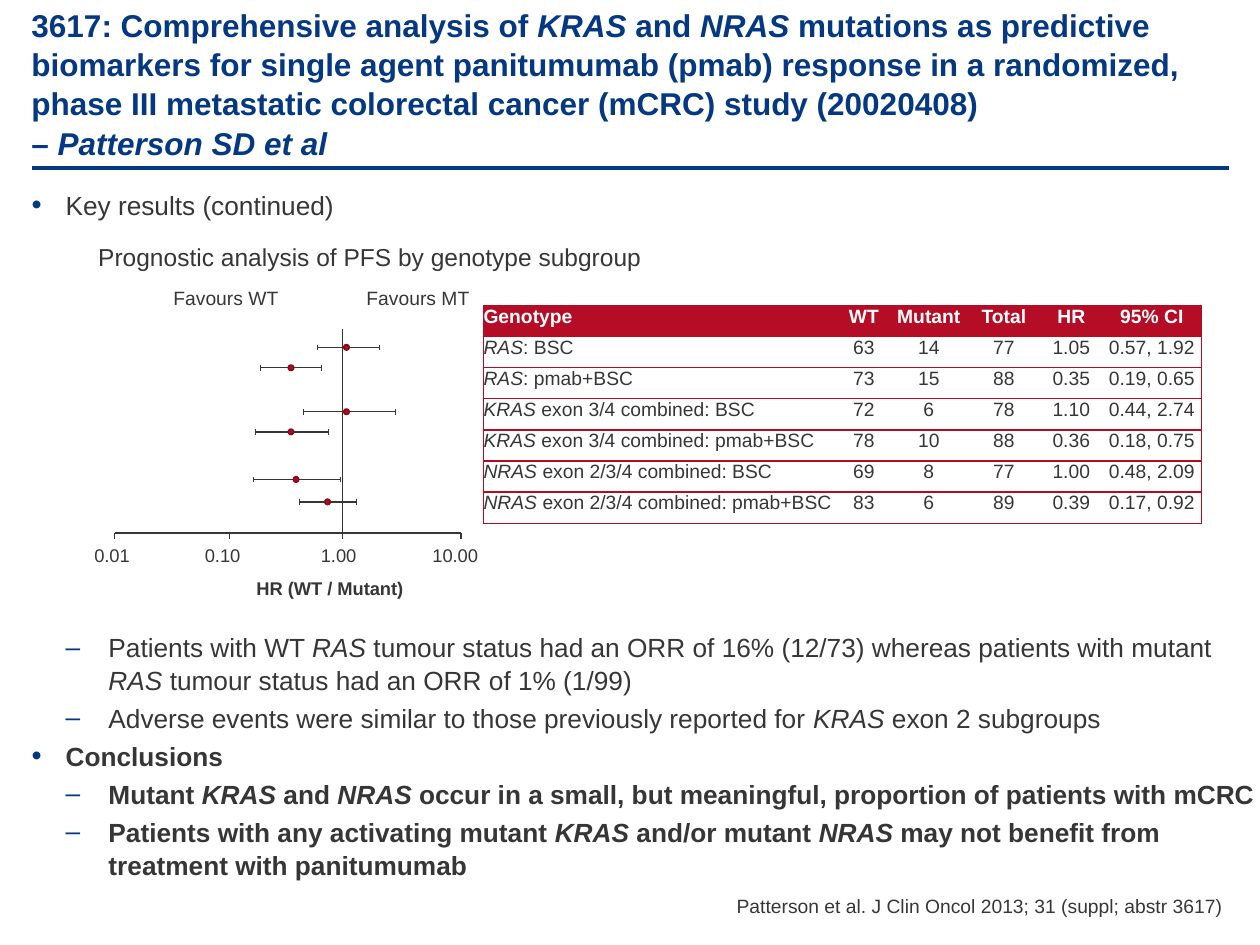
from pptx import Presentation
from pptx.dml.color import RGBColor
from pptx.enum.shapes import MSO_CONNECTOR as Conn, MSO_SHAPE as Shape
from pptx.enum.text import MSO_ANCHOR as Anchor, PP_ALIGN as Align
from pptx.oxml.ns import qn
from pptx.util import Pt
from lxml.etree import SubElement as Sub

paint = RGBColor.from_string
NAVY, GREY, RED, EDGE = "043882", "363636", "B60D27", "B60923"

deck = Presentation()
deck.slide_width, deck.slide_height = Pt(720), Pt(540)
slide = deck.slides.add_slide(deck.slide_layouts[6])
shapes = slide.shapes


def write(par, text, size, hue=GREY, bold=False):
    """Add runs; parts between asterisks are italic."""
    for i, part in enumerate(text.split("*")):
        if part:
            run = par.add_run()
            run.text = part
            font = run.font
            font.name, font.size, font.bold = "Arial", Pt(size), bold
            font.italic = i % 2 == 1
            font.color.rgb = paint(hue)


def rule(x1, y1, x2, y2, hue=GREY, width=0.75):
    line = shapes.add_connector(Conn.STRAIGHT, Pt(x1), Pt(y1), Pt(x2), Pt(y2))
    line.line.color.rgb = paint(hue)
    line.line.width = Pt(width)
    Sub(line._element.spPr, qn("a:effectLst"))


# Title
rule(18, 95.8, 702, 95.8, NAVY, 2.25)
frame = shapes.add_textbox(Pt(18), Pt(18), Pt(684), Pt(74.2)).text_frame
frame.word_wrap = True
frame.vertical_anchor = Anchor.BOTTOM
frame.margin_left = frame.margin_right = frame.margin_bottom = 0
par = frame.paragraphs[0]
par.line_spacing = 1.04
write(par, "3617: Comprehensive analysis of *KRAS* and *NRAS* mutations as "
      "predictive biomarkers for single agent panitumumab (pmab) response in a "
      "randomized, phase III metastatic colorectal cancer (mCRC) study "
      "(20020408) ", 18, NAVY, True)
par.add_line_break()
write(par, "– *Patterson SD et al*", 18, NAVY, True)

# Bullet text: top, height, then (level, bold, text)
bodies = [
    (103.7, 28, [(0, False, "Key results (continued)")]),
    (356.6, 150, [
        (1, False, "Patients with WT *RAS *tumour status had an ORR of 16% (12/73) "
         "whereas patients with mutant *RAS *tumour status had an ORR of 1% (1/99)"),
        (1, False, "Adverse events were similar to those previously reported for "
         "*KRAS* exon 2 subgroups"),
        (0, True, "Conclusions"),
        (1, True, "Mutant *KRAS* and *NRAS* occur in a small, but meaningful, "
         "proportion of patients with mCRC"),
        (1, True, "Patients with any activating mutant *KRAS* and/or mutant *NRAS* "
         "may not benefit from treatment with panitumumab"),
    ]),
]
for top, high, items in bodies:
    frame = shapes.add_textbox(Pt(18), Pt(top), Pt(702), Pt(high)).text_frame
    frame.word_wrap = True
    frame.margin_left = frame.margin_right = 0
    for i, (level, bold, text) in enumerate(items):
        par = frame.add_paragraph() if i else frame.paragraphs[0]
        par.level = level
        par.line_spacing = 1.04
        par.space_before = Pt(3 if i else 0)
        left, hang, size, mark = [(19.5, 19.5, 110, "•"), (44, 24.5, 100, "–")][level]
        props = par._p.get_or_add_pPr()
        props.set("marL", str(Pt(left)))
        props.set("indent", str(-Pt(hang)))
        Sub(Sub(props, qn("a:buClr")), qn("a:srgbClr"), val=NAVY)
        Sub(props, qn("a:buSzPct"), val=str(size * 1000))
        Sub(props, qn("a:buFont"), typeface="Arial")
        Sub(props, qn("a:buChar"), char=mark)
        write(par, text, 15, GREY, bold)

# Source line
frame = shapes.add_textbox(Pt(360.7), Pt(503.3), Pt(341.3), Pt(24.5)).text_frame
frame.word_wrap = True
frame.vertical_anchor = Anchor.BOTTOM
frame.margin_left = frame.margin_right = 0
par = frame.paragraphs[0]
par.alignment = Align.RIGHT
write(par, "Patterson et al. J Clin Oncol 2013; 31 (suppl; abstr 3617) ", 11)

# Forest plot: row height, low end, high end, mean
rows = [
    (198.5, 181.4, 216.7, 198),
    (210.2, 149, 183.9, 166.3),
    (235.3, 173.4, 226, 198),
    (246.8, 146.2, 187.9, 166.3),
    (274, 145, 194.4, 169.2),
    (286.8, 171, 203.8, 187.2),
]
for y, low, high, mean in rows:
    rule(low, y, high, y)
    for x in (low, high):
        rule(x, y - 1.6, x, y + 1.6)

# Axes and ticks
base = 304.6
rule(195.8, 188, 195.8, 308.2)
rule(65.5, base, 263.5, base)
for x in (65.5, 131, 263.5):
    rule(x, base, x, base + 3.6)

# Mean dots, over the lines
for y, low, high, mean in rows:
    dot = shapes.add_shape(Shape.OVAL, Pt(mean - 1.5), Pt(y - 1.5), Pt(3), Pt(3))
    dot.shadow.inherit = False
    dot.fill.solid()
    dot.fill.fore_color.rgb = paint(RED)
    dot.line.color.rgb = paint("870A1D")
    dot.line.width = Pt(1)

# Plot labels
labels = [
    ("Prognostic analysis of PFS by genotype subgroup", 49, 134.6, 422, 24.5, 14, False),
    ("Favours WT", 92, 160, 75, 21, 11, False),
    ("Favours MT", 202.3, 160, 73.5, 21, 11, False),
    ("0.01", 46.8, 307.4, 41.5, 23, 10.5, False),
    ("0.10", 110, 307.4, 41.5, 23, 10.5, False),
    ("1.00", 176.3, 307.4, 41.5, 23, 10.5, False),
    ("10.00", 240, 307.4, 48, 23, 10.5, False),
    ("HR (WT / Mutant)", 139.5, 326.2, 100, 20, 10.5, True),
]
for text, x, y, wide, high, size, bold in labels:
    frame = shapes.add_textbox(Pt(x), Pt(y), Pt(wide), Pt(high)).text_frame
    frame.word_wrap = False
    write(frame.paragraphs[0], text, size, GREY, bold)

# Genotype table
data = [
    ("Genotype", "WT", "Mutant", "Total", "HR", "95% CI"),
    ("*RAS*: BSC", "63", "14", "77", "1.05", "0.57, 1.92"),
    ("*RAS*: pmab+BSC", "73", "15", "88", "0.35", "0.19, 0.65"),
    ("*KRAS* exon 3/4 combined: BSC", "72", "6", "78", "1.10", "0.44, 2.74"),
    ("*KRAS* exon 3/4 combined: pmab+BSC", "78", "10", "88", "0.36", "0.18, 0.75"),
    ("*NRAS* exon 2/3/4 combined: BSC", "69", "8", "77", "1.00", "0.48, 2.09"),
    ("*NRAS* exon 2/3/4 combined: pmab+BSC", "83", "6", "89", "0.39", "0.17, 0.92"),
]
wides = [202.3, 30.2, 44, 41.8, 35.3, 56.8]
grid = shapes.add_table(len(data), len(wides), Pt(276.3), Pt(174.7),
                        Pt(sum(wides)), Pt(17.75 * len(data))).table
for col, wide in zip(grid.columns, wides):
    col.width = Pt(wide)
for r, row in enumerate(data):
    grid.rows[r].height = Pt(17.75)
    for c, text in enumerate(row):
        cell = grid.cell(r, c)
        cell.margin_left = cell.margin_right = 0
        cell.margin_top = cell.margin_bottom = 0
        props = cell._tc.get_or_add_tcPr()
        shown = {"L": c == 0, "R": c == len(wides) - 1, "T": True, "B": True}
        for side, on in shown.items():
            edge = Sub(props, qn("a:ln" + side), w=str(Pt(0.75)))
            if on:
                Sub(Sub(edge, qn("a:solidFill")), qn("a:srgbClr"), val=EDGE)
            else:
                Sub(edge, qn("a:noFill"))
        if r:
            cell.fill.background()
        else:
            cell.fill.solid()
            cell.fill.fore_color.rgb = paint(RED)
        par = cell.text_frame.paragraphs[0]
        par.alignment = Align.CENTER if c else Align.LEFT
        write(par, text, 11, GREY if r else "FFFFFF", r == 0)

deck.save("out.pptx")
